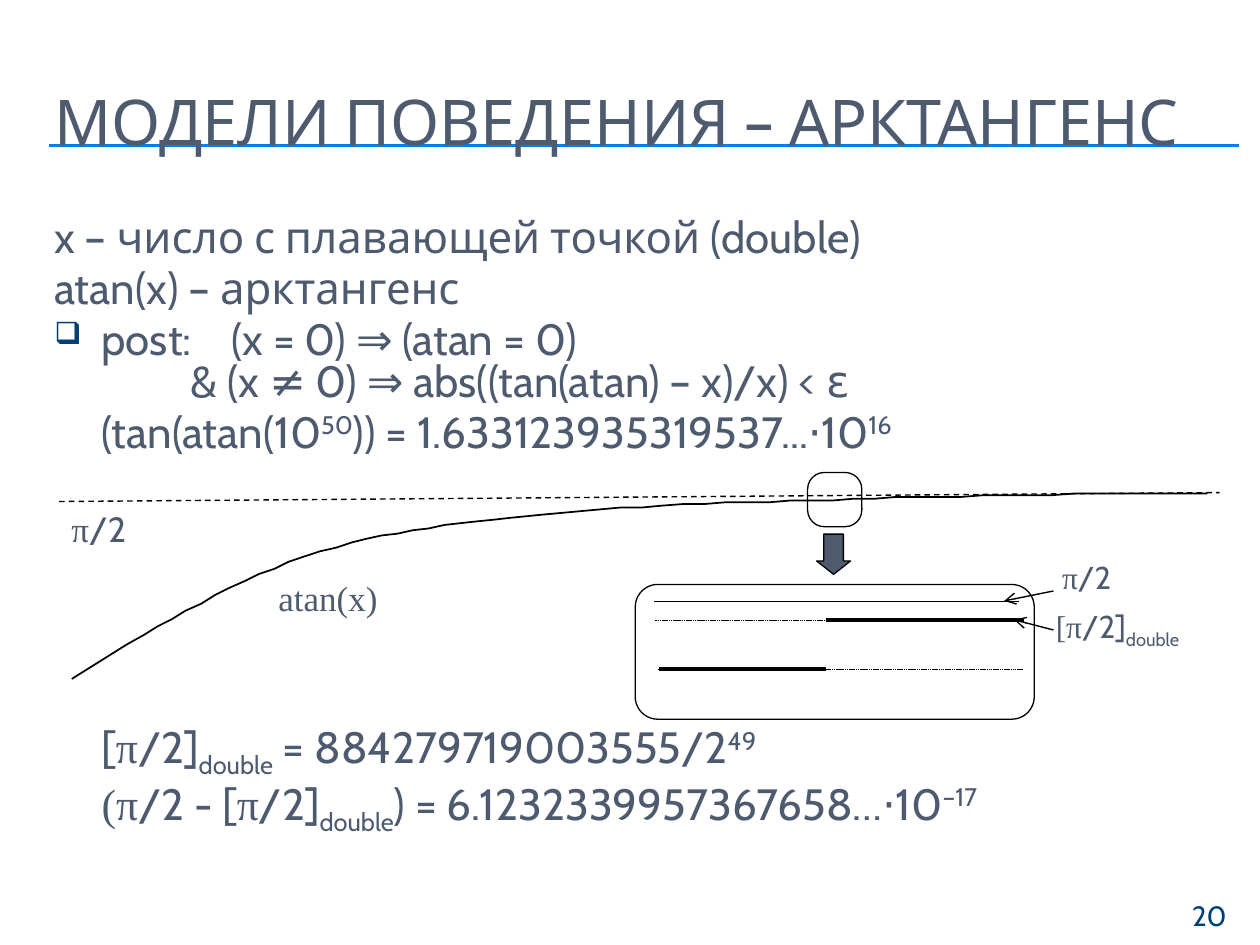
from dataclasses import dataclass
from typing import NamedTuple

from lxml.etree import SubElement
from pptx import Presentation
from pptx.dml.color import RGBColor
from pptx.enum.dml import MSO_LINE_DASH_STYLE as Dash
from pptx.enum.shapes import MSO_CONNECTOR_TYPE as Connector, MSO_SHAPE as Preset
from pptx.enum.text import MSO_ANCHOR as Anchor, PP_ALIGN as Align
from pptx.oxml.ns import qn
from pptx.util import Pt

SLATE, NAVY, BLUE, SKY = "4E5B6F", "003F75", "007EEB", "51D9FF"
BLACK, WHITE = "000000", "FFFFFF"
SANS, SERIF = "Cabin", "Times New Roman"
SUPER, SUB = 30, -25


class Box(NamedTuple):
    left: float
    top: float
    width: float
    height: float


class Piece(NamedTuple):
    text: str
    face: str = SANS
    baseline: int = 0


@dataclass
class Para:
    pieces: list[Piece]
    indent: float = 0
    before: float = 5
    bullet: str = ""
    tabs: tuple[float, ...] = ()


@dataclass
class Stroke:
    start: tuple[float, float]
    end: tuple[float, float]
    width: float = 0.75
    color: str = BLACK
    dash: Dash | None = None
    arrow: bool = False


def hex_color(value: str) -> RGBColor:
    return RGBColor.from_string(value)


def pts(values) -> list[Pt]:
    return [Pt(value) for value in values]


def apply(target, values: dict) -> None:
    for name, value in values.items():
        setattr(target, name, value)


def mark_para(para_xml, para: Para) -> None:
    """Add the hanging bullet and the tab stops of a paragraph."""
    props = para_xml.get_or_add_pPr()
    props.set("marL", str(Pt(para.indent)))
    props.set("indent", str(-Pt(para.indent) if para.bullet else 0))
    if para.bullet:
        color = SubElement(props, qn("a:buClr"))
        SubElement(color, qn("a:srgbClr"), val=NAVY)
        SubElement(props, qn("a:buSzPct"), val="70000")
        SubElement(props, qn("a:buChar"), char=para.bullet)
    if para.tabs:
        stops = SubElement(props, qn("a:tabLst"))
        for stop in para.tabs:
            SubElement(stops, qn("a:tab"), pos=str(Pt(stop)), algn="l")


def write(slide, box: Box, paras: list[Para], size: float, color: str = SLATE,
          spacing: float = 1.0, align: Align = Align.LEFT,
          anchor: Anchor = Anchor.TOP) -> None:
    frame = slide.shapes.add_textbox(*pts(box)).text_frame
    apply(frame, {"word_wrap": True, "vertical_anchor": anchor})
    for number, para in enumerate(paras):
        line = frame.add_paragraph() if number else frame.paragraphs[0]
        apply(line, {"alignment": align, "line_spacing": spacing,
                     "space_before": Pt(para.before)})
        mark_para(line._p, para)
        for piece in para.pieces:
            run = line.add_run()
            run.text = piece.text
            apply(run.font, {"name": piece.face, "size": Pt(size)})
            run.font.color.rgb = hex_color(color)
            if piece.baseline:
                run.font._element.set("baseline", str(piece.baseline * 1000))


def label(slide, box: Box, size: float, *pieces: Piece) -> None:
    write(slide, box, [Para(list(pieces), before=0)], size)


def draw_stroke(slide, stroke: Stroke) -> None:
    line = slide.shapes.add_connector(
        Connector.STRAIGHT, *pts(stroke.start + stroke.end))
    line.line.color.rgb = hex_color(stroke.color)
    apply(line.line, {"width": Pt(stroke.width), "dash_style": stroke.dash})
    if stroke.arrow:
        SubElement(line.line._get_or_add_ln(), qn("a:tailEnd"), type="arrow")
    SubElement(line._element.spPr, qn("a:effectLst"))


def draw_preset(slide, preset: Preset, box: Box, adjust: tuple[float, ...],
                fill: str = "", opacity: int = 100) -> None:
    shape = slide.shapes.add_shape(preset, *pts(box))
    shape.shadow.inherit = False
    for index, value in enumerate(adjust):
        shape.adjustments[index] = value
    shape.line.color.rgb = hex_color(BLACK)
    shape.line.width = Pt(0.75)
    if not fill:
        shape.fill.background()
        return
    shape.fill.solid()
    shape.fill.fore_color.rgb = hex_color(fill)
    if opacity < 100:
        tint = shape._element.spPr.find(".//" + qn("a:srgbClr"))
        SubElement(tint, qn("a:alpha"), val=str(opacity * 1000))


def bezier(knots, t: float) -> tuple[float, float]:
    weights = ((1 - t) ** 3, 3 * t * (1 - t) ** 2, 3 * t * t * (1 - t), t ** 3)
    return tuple(sum(w * knot[axis] for w, knot in zip(weights, knots))
                 for axis in (0, 1))


def draw_curve(slide, knots, steps: int = 16) -> None:
    """Draw chained cubic curves; neighbours share an end knot."""
    points = [bezier(knots[first:first + 4], step / steps)
              for first in range(0, len(knots) - 1, 3)
              for step in range(1, steps + 1)]
    builder = slide.shapes.build_freeform(*knots[0], scale=Pt(1))
    builder.add_line_segments(points, close=False)
    curve = builder.convert_to_shape()
    curve.shadow.inherit = False
    curve.fill.background()
    curve.line.color.rgb = hex_color(BLACK)
    curve.line.width = Pt(1)


PI = Piece("π", SERIF)
HALF = Piece("/2")
DOUBLE = Piece("double", SANS, SUB)

DEFINITIONS = [
    Para([Piece("x – число с плавающей точкой (double)")]),
    Para([Piece("atan(x) – арктангенс")]),
    Para([Piece("post:\t(x = 0) ⇒ (atan = 0)")], 27, bullet="❑", tabs=(74, 101)),
    Para([Piece("& (x ≠ 0) ⇒ abs((tan(atan) – x)/x) < ε")], 78, before=0),
    Para([Piece("(tan(atan(10"), Piece("50", SANS, SUPER),
          Piece(")) = 1.633123935319537...⋅10"), Piece("16", SANS, SUPER)], 27),
]
ROUNDING = [
    Para([Piece("["), PI, Piece("/2]"), DOUBLE,
          Piece(" = 884279719003555/2"), Piece("49", SANS, SUPER)], 27),
    Para([Piece("(π", SERIF), Piece("/2 - ["), PI, Piece("/2]"), DOUBLE,
          Piece(") = 6.1232339957367658…⋅10"), Piece("–17", SANS, SUPER)], 27),
]
TITLE_RULES = [Stroke((28, y), (708, y), color=color)
               for y, color in ((82.8, SKY), (82.8, BLUE), (83.5, BLUE))]
ASYMPTOTE = Stroke((33.8, 286.6), (697, 281.5), 0.79, dash=Dash.DASH)
ARCTANGENT = [(41, 388), (84.2, 361.4), (127.4, 334.1), (174.2, 318.2),
              (221.8, 302.4), (265.7, 298.1), (321.8, 293), (378, 287.3),
              (450.7, 286.6), (511.9, 284.4), (573.8, 283), (661.7, 281.5),
              (690.5, 281.5)]
EXACT, ROUNDED, BELOW = 343.4, 354.2, 382.3
ZOOMED_LEVELS = [
    Stroke((581.8, EXACT), (373.7, EXACT), 0.1, dash=Dash.SQUARE_DOT),
    Stroke((472.3, BELOW), (376.6, BELOW), 2),
    Stroke((585.4, ROUNDED), (472.3, ROUNDED), 2),
    Stroke((582.5, ROUNDED), (374.4, ROUNDED), 0.1, dash=Dash.LONG_DASH),
    Stroke((584.6, BELOW), (375.8, BELOW), 0.1, dash=Dash.LONG_DASH),
]
POINTERS = [Stroke((602, 337.7), (573.8, EXACT), 0.79, arrow=True),
            Stroke((602, 360), (579.6, ROUNDED), 0.79, arrow=True)]


def main() -> None:
    deck = Presentation()
    apply(deck, {"slide_width": Pt(720), "slide_height": Pt(540)})
    slide = deck.slides.add_slide(deck.slide_layouts[6])

    for rule in TITLE_RULES:
        draw_stroke(slide, rule)
    write(slide, Box(24, 36, 684, 66),
          [Para([Piece("МОДЕЛИ ПОВЕДЕНИЯ – АРКТАНГЕНС")], before=0)],
          36, anchor=Anchor.MIDDLE)
    write(slide, Box(24, 122.4, 684, 145), DEFINITIONS, 25, spacing=0.8)
    write(slide, Box(24, 411, 684, 80), ROUNDING, 25, spacing=0.8)
    write(slide, Box(648, 510, 60, 19.5), [Para([Piece("20")], before=0)],
          16, NAVY, align=Align.RIGHT)

    draw_stroke(slide, ASYMPTOTE)
    draw_curve(slide, ARCTANGENT)
    label(slide, Box(33.8, 286.6, 56, 31.5), 20, PI, HALF)
    label(slide, Box(152, 326, 78.5, 31.5), 20, Piece("atan(x)", SERIF))

    draw_preset(slide, Preset.ROUNDED_RECTANGLE, Box(363, 334, 228, 77),
                (0.167,), WHITE, 60)
    draw_preset(slide, Preset.DOWN_ARROW, Box(466.6, 305.2, 19.5, 23),
                (0.575, 0.393), SLATE)
    draw_preset(slide, Preset.ROUNDED_RECTANGLE, Box(461.5, 270, 31, 31), (0.309,))
    for stroke in ZOOMED_LEVELS + POINTERS:
        draw_stroke(slide, stroke)
    label(slide, Box(599.8, 315.4, 56, 29), 18, PI, HALF)
    label(slide, Box(596.2, 343.4, 112, 29), 18,
          Piece("[π", SERIF), Piece("/2]"), DOUBLE)

    deck.save("out.pptx")


if __name__ == "__main__":
    main()
